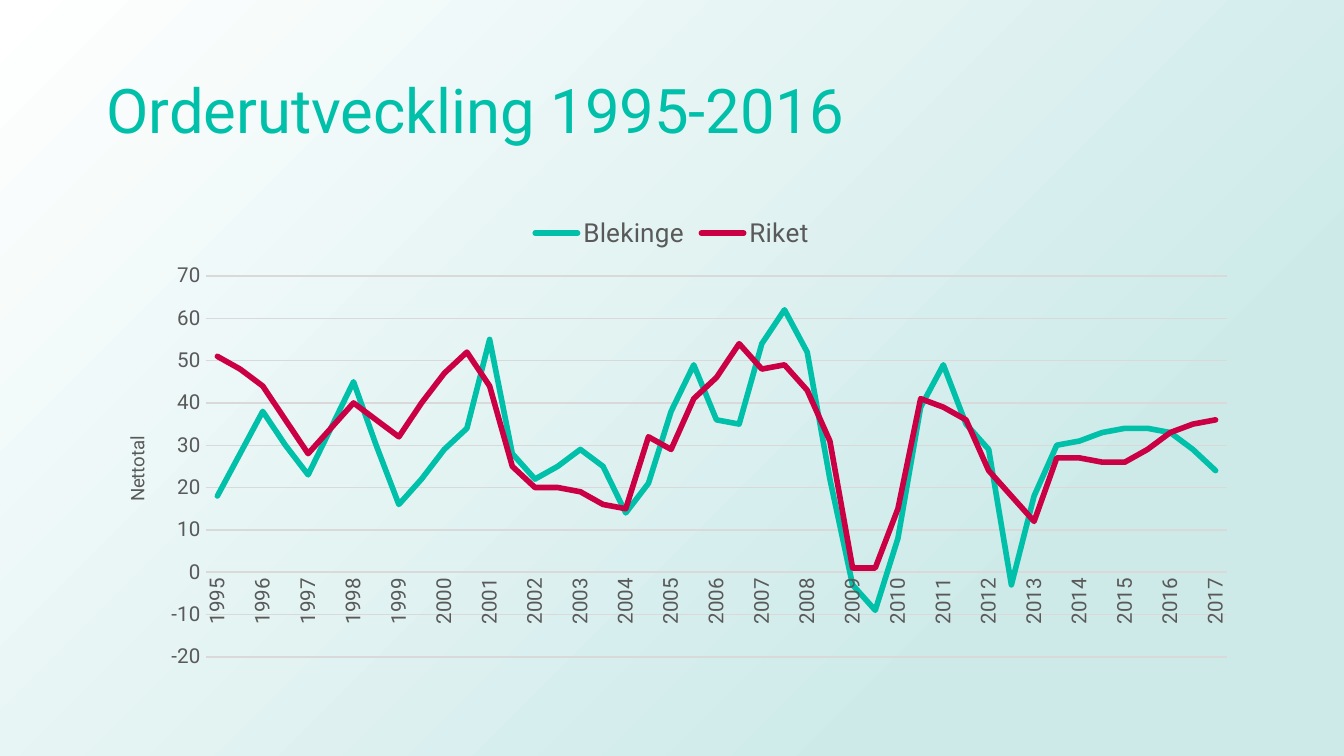
from dataclasses import dataclass

from lxml.etree import SubElement
from pptx import Presentation
from pptx.chart.data import CategoryChartData
from pptx.dml.color import RGBColor
from pptx.enum.chart import XL_CHART_TYPE, XL_LEGEND_POSITION, XL_TICK_MARK
from pptx.enum.shapes import MSO_SHAPE
from pptx.enum.text import MSO_ANCHOR, MSO_AUTO_SIZE, PP_ALIGN
from pptx.oxml import parse_xml
from pptx.oxml.ns import nsdecls, qn
from pptx.util import Emu, Pt

PX = 914400 / 134.4
SLIDE_SIZE = (1344, 756)
TITLE_BOX = (93, 40, 1158, 147)
CHART_BOX = (93, 202, 1158, 478)
PLOT_BOX = (113, 74, 1021, 381)
AXIS_TITLE_AT = (29, 231)
VERTICAL = "-5400000"

YEARS = [str(1995 + half // 2) for half in range(45)]
BLEKINGE = [18, 28, 38, 30, 23, 34, 45, 30, 16, 22, 29, 34, 55, 28, 22,
            25, 29, 25, 14, 21, 38, 49, 36, 35, 54, 62, 52, 22, -3, -9,
            8, 39, 49, 35, 29, -3, 18, 30, 31, 33, 34, 34, 33, 29, 24]
RIKET = [51, 48, 44, 36, 28, 34, 40, 36, 32, 40, 47, 52, 44, 25, 20,
         20, 19, 16, 15, 32, 29, 41, 46, 54, 48, 49, 43, 31, 1, 1,
         15, 41, 39, 36, 24, 18, 12, 27, 27, 26, 26, 29, 33, 35, 36]


@dataclass(frozen=True)
class Theme:
    """Colours, font and type sizes of the slide."""
    font: str = "Roboto"
    teal: str = "00C0A9"
    red: str = "CB0044"
    grey: str = "595959"
    grid: str = "D9D9D9"
    mist: str = "CDEAE9"
    white: str = "FFFFFF"
    title_size: int = 33
    legend_size: int = 14
    label_size: int = 11
    axis_title_size: int = 10


THEME = Theme()


def emu(lengths):
    """Turn px lengths into EMU."""
    return [Emu(round(length * PX)) for length in lengths]


def style_font(font, size, color):
    """Apply the theme font with a size and a colour."""
    font.name = THEME.font
    font.size = Pt(size)
    font.bold = False
    font.color.rgb = RGBColor.from_string(color)


def style_line(line, color, width):
    """Give a line a solid colour and a width in points."""
    line.color.rgb = RGBColor.from_string(color)
    line.width = Pt(width)


def set_layout(parent, index, fractions, target=None):
    """Place a chart part at fixed fractions of the chart area."""
    for earlier in parent.findall(qn("c:layout")):
        parent.remove(earlier)
    layout = parse_xml(f'<c:layout {nsdecls("c")}><c:manualLayout/></c:layout>')
    manual = layout[0]
    if target:
        SubElement(manual, qn("c:layoutTarget")).set("val", target)
    for mode in ("xMode", "yMode"):
        SubElement(manual, qn(f"c:{mode}")).set("val", "edge")
    for key, fraction in zip("xywh", fractions):
        SubElement(manual, qn(f"c:{key}")).set("val", f"{fraction:.4f}")
    parent.insert(index, layout)


def turn_vertical(body):
    """Turn the text of a chart part to read upwards."""
    body.set("rot", VERTICAL)
    body.set("vert", "horz")


def add_backdrop(slide, box):
    """Fill the box with a gradient glowing from the bottom right."""
    backdrop = slide.shapes.add_shape(MSO_SHAPE.RECTANGLE, *emu(box))
    backdrop.shadow.inherit = False
    backdrop.line.fill.background()
    backdrop.fill.gradient()
    gradient = backdrop._element.spPr.find(qn("a:gradFill"))
    gradient.getparent().replace(gradient, parse_xml(
        f'<a:gradFill {nsdecls("a")} rotWithShape="1"><a:gsLst>'
        f'<a:gs pos="23000"><a:srgbClr val="{THEME.mist}"/></a:gs>'
        f'<a:gs pos="100000"><a:srgbClr val="{THEME.white}"/></a:gs></a:gsLst>'
        '<a:path path="circle"><a:fillToRect l="100000" t="100000"/></a:path>'
        '</a:gradFill>'))
    slide.shapes._spTree.insert(2, backdrop._element)


def add_title(slide, box):
    """Place the slide title in the box."""
    title = slide.shapes.title
    title.left, title.top, title.width, title.height = emu(box)
    frame = title.text_frame
    frame.text = "Orderutveckling 1995-2016"
    frame.auto_size = MSO_AUTO_SIZE.NONE
    frame.vertical_anchor = MSO_ANCHOR.MIDDLE
    heading = frame.paragraphs[0]
    heading.alignment = PP_ALIGN.LEFT
    heading.line_spacing = 0.9
    style_font(heading.runs[0].font, THEME.title_size, THEME.teal)


def format_year_axis(axis):
    """Show each year once, upright, under the zero line."""
    axis.major_tick_mark = XL_TICK_MARK.NONE
    axis.has_major_gridlines = False
    style_line(axis.format.line, THEME.grid, 0.75)
    style_font(axis.tick_labels.font, THEME.label_size, THEME.grey)
    turn_vertical(axis._element.find(qn("c:txPr")).find(qn("a:bodyPr")))
    skip = parse_xml(f'<c:tickLblSkip {nsdecls("c")} val="2"/>')
    axis._element.find(qn("c:noMultiLvlLbl")).addprevious(skip)


def format_value_axis(axis, title_at):
    """Set the scale, gridlines and title of the value axis."""
    axis.minimum_scale, axis.maximum_scale, axis.major_unit = -20, 70, 10
    axis.major_tick_mark = XL_TICK_MARK.NONE
    axis.format.line.fill.background()
    style_line(axis.major_gridlines.format.line, THEME.grid, 0.75)
    labels = axis.tick_labels
    labels.number_format = "0"
    labels.number_format_is_linked = False
    style_font(labels.font, THEME.label_size, THEME.grey)
    frame = axis.axis_title.text_frame
    frame.text = "Nettotal"
    style_font(frame.paragraphs[0].runs[0].font, THEME.axis_title_size, THEME.grey)
    turn_vertical(frame._txBody.find(qn("a:bodyPr")))
    set_layout(axis.axis_title._element, 1, title_at)


def add_order_chart(slide, box):
    """Draw the half-yearly order lines in the box."""
    orders = CategoryChartData(number_format="0")
    orders.categories = YEARS
    orders.add_series("Blekinge", BLEKINGE)
    orders.add_series("Riket", RIKET)
    chart = slide.shapes.add_chart(XL_CHART_TYPE.LINE, *emu(box), orders).chart
    width, height = box[2:]
    chart.has_title = False
    style_font(chart.font, THEME.axis_title_size, THEME.grey)
    chart.has_legend = True
    chart.legend.position = XL_LEGEND_POSITION.TOP
    chart.legend.include_in_layout = False
    style_font(chart.legend.font, THEME.legend_size, THEME.grey)
    chart.plots[0].vary_by_categories = False
    for region, color in zip(chart.plots[0].series, (THEME.teal, THEME.red)):
        region.smooth = False
        style_line(region.format.line, color, 3)
        region.format.line._ln.set("cap", "rnd")
    format_year_axis(chart.category_axis)
    format_value_axis(chart.value_axis,
                      (AXIS_TITLE_AT[0] / width, AXIS_TITLE_AT[1] / height))
    plot = [part / whole for part, whole in zip(PLOT_BOX, (width, height) * 2)]
    set_layout(chart._chartSpace.chart.plotArea, 0, plot, "inner")


def main():
    """Build the slide and save it."""
    deck = Presentation()
    deck.slide_width, deck.slide_height = emu(SLIDE_SIZE)
    slide = deck.slides.add_slide(deck.slide_layouts[5])
    add_backdrop(slide, (0, 0, *SLIDE_SIZE))
    add_title(slide, TITLE_BOX)
    add_order_chart(slide, CHART_BOX)
    deck.save("out.pptx")


if __name__ == "__main__":
    main()
